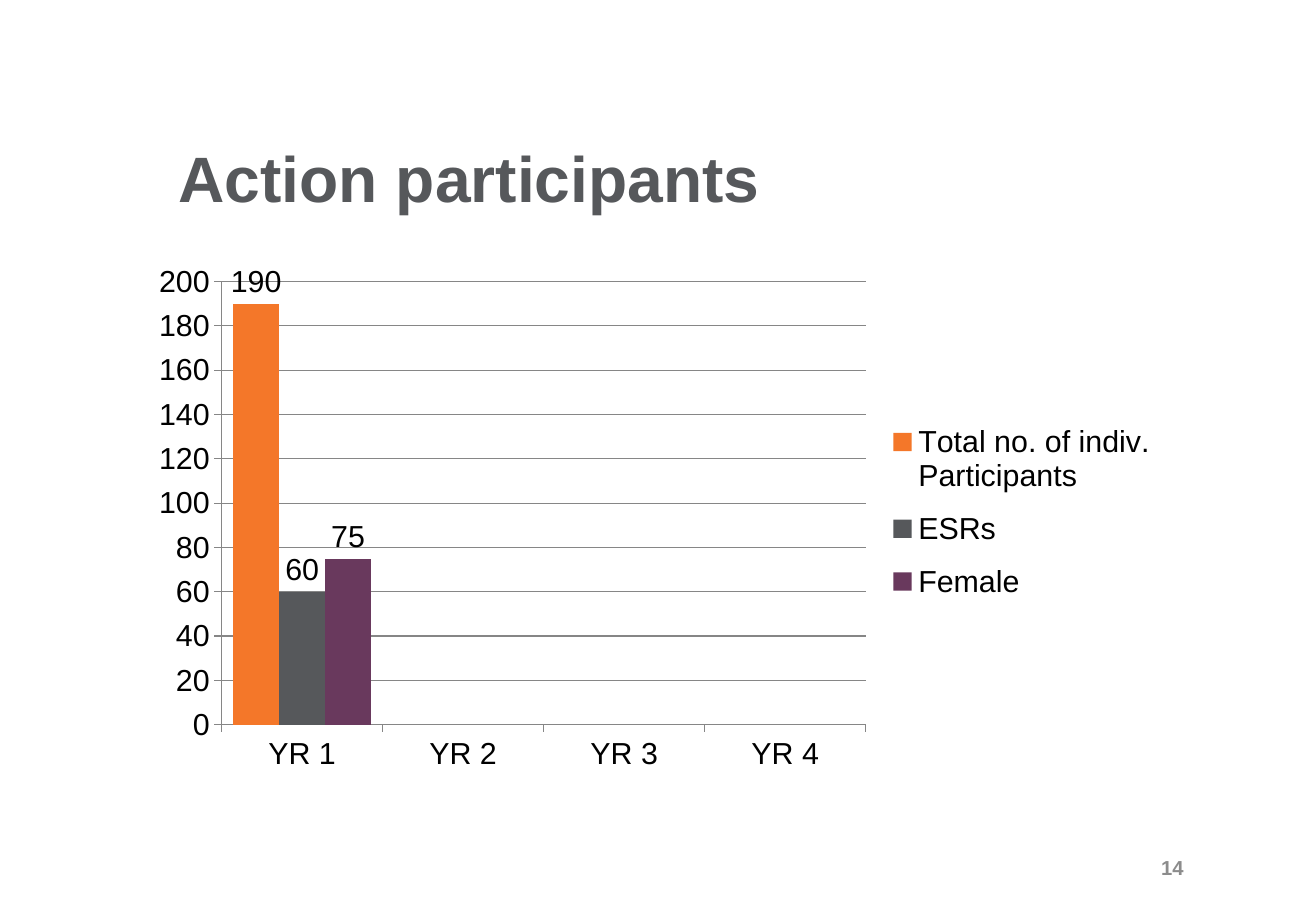
import pptx
import pptx.chart.data
import pptx.dml.color
import pptx.enum.chart
import pptx.enum.text
import pptx.oxml
import pptx.oxml.ns
import pptx.util
from pptx.util import Inches

FONT = "Arial"
COLORS = {
    "title": "56585B",
    "page": "8C8C8C",
    "text": "000000",
    "axis": "868686",
    "total": "F47729",
    "esrs": "56585B",
    "female": "69395D",
}
YEARS = ["YR 1", "YR 2", "YR 3", "YR 4"]
PARTICIPANTS = [
    ("Total no. of indiv. Participants", 190, "total"),
    ("ESRs", 60, "esrs"),
    ("Female", 75, "female"),
]


def rgb(name):
    return pptx.dml.color.RGBColor.from_string(COLORS[name])


def set_font(font, size, color, bold=False):
    font.name = FONT
    font.size = pptx.util.Pt(size)
    font.bold = bold
    font.color.rgb = rgb(color)


def set_layout(element, left, top, width, height, target=None):
    """Fix a chart part's place, in fractions of the chart's size."""
    for old in element.findall(pptx.oxml.ns.qn("c:layout")):
        element.remove(old)
    inner = f'<c:layoutTarget val="{target}"/>' if target else ""
    layout = pptx.oxml.parse_xml(
        f'<c:layout {pptx.oxml.ns.nsdecls("c")}><c:manualLayout>{inner}'
        '<c:xMode val="edge"/><c:yMode val="edge"/>'
        f'<c:x val="{left}"/><c:y val="{top}"/>'
        f'<c:w val="{width}"/><c:h val="{height}"/>'
        '</c:manualLayout></c:layout>')
    position = element.find(pptx.oxml.ns.qn("c:legendPos"))
    if position is None:
        element.insert(0, layout)
    else:
        position.addnext(layout)


def add_title(slide, text):
    title = slide.shapes.title
    title.left, title.top = Inches(1.37), Inches(1.03)
    title.width, title.height = Inches(8.37), Inches(0.93)
    frame = title.text_frame
    frame.text = text
    frame.vertical_anchor = pptx.enum.text.MSO_ANCHOR.TOP
    frame.margin_top = Inches(0.11)
    heading = frame.paragraphs[0]
    heading.alignment = pptx.enum.text.PP_ALIGN.LEFT
    set_font(heading.font, 38, "title", bold=True)


def add_page_number(slide, number):
    box = slide.shapes.add_textbox(Inches(9.16), Inches(6.94), Inches(0.68), Inches(0.4))
    frame = box.text_frame
    frame.word_wrap = True
    frame.vertical_anchor = pptx.enum.text.MSO_ANCHOR.MIDDLE
    frame.text = number
    page = frame.paragraphs[0]
    page.alignment = pptx.enum.text.PP_ALIGN.RIGHT
    set_font(page.font, 12, "page", bold=True)


def style_axes(chart):
    values = chart.value_axis
    values.minimum_scale, values.maximum_scale, values.major_unit = 0, 200, 20
    values.has_major_gridlines = True
    for line in (values.format.line, values.major_gridlines.format.line,
                 chart.category_axis.format.line):
        line.color.rgb = rgb("axis")
        line.width = pptx.util.Pt(0.75)
    for axis in (values, chart.category_axis):
        axis.major_tick_mark = pptx.enum.chart.XL_TICK_MARK.OUTSIDE


def style_series(series, color):
    series.format.fill.solid()
    series.format.fill.fore_color.rgb = rgb(color)
    labels = series.data_labels
    labels.show_value = True
    labels.position = pptx.enum.chart.XL_LABEL_POSITION.OUTSIDE_END


def add_participant_chart(slide):
    data = pptx.chart.data.CategoryChartData()
    data.categories = YEARS
    for name, first_year, _ in PARTICIPANTS:
        data.add_series(name, [first_year, None, None, None])
    chart = slide.shapes.add_chart(
        pptx.enum.chart.XL_CHART_TYPE.COLUMN_CLUSTERED,
        Inches(1.14), Inches(1.99), Inches(8.55), Inches(4.68), data).chart
    set_font(chart.font, 18, "text")
    chart.has_title = False
    chart.has_legend = True
    chart.legend.position = pptx.enum.chart.XL_LEGEND_POSITION.RIGHT
    chart.legend.include_in_layout = False
    plot = chart.plots[0]
    plot.gap_width, plot.overlap = 50, 0
    plot.vary_by_categories = False
    for series, (_, _, color) in zip(plot.series, PARTICIPANTS):
        style_series(series, color)
    style_axes(chart)
    plot_area = chart.element.find(".//" + pptx.oxml.ns.qn("c:plotArea"))
    set_layout(plot_area, 0.08, 0.07, 0.62, 0.78, "inner")
    set_layout(chart.element.find(".//" + pptx.oxml.ns.qn("c:legend")),
               0.71, 0.29, 0.28, 0.37)


def main():
    deck = pptx.Presentation()
    deck.slide_width, deck.slide_height = Inches(10.83), Inches(7.5)
    slide = deck.slides.add_slide(deck.slide_layouts[5])
    add_page_number(slide, "14")
    add_participant_chart(slide)
    add_title(slide, "Action participants")
    deck.save("out.pptx")


if __name__ == "__main__":
    main()
